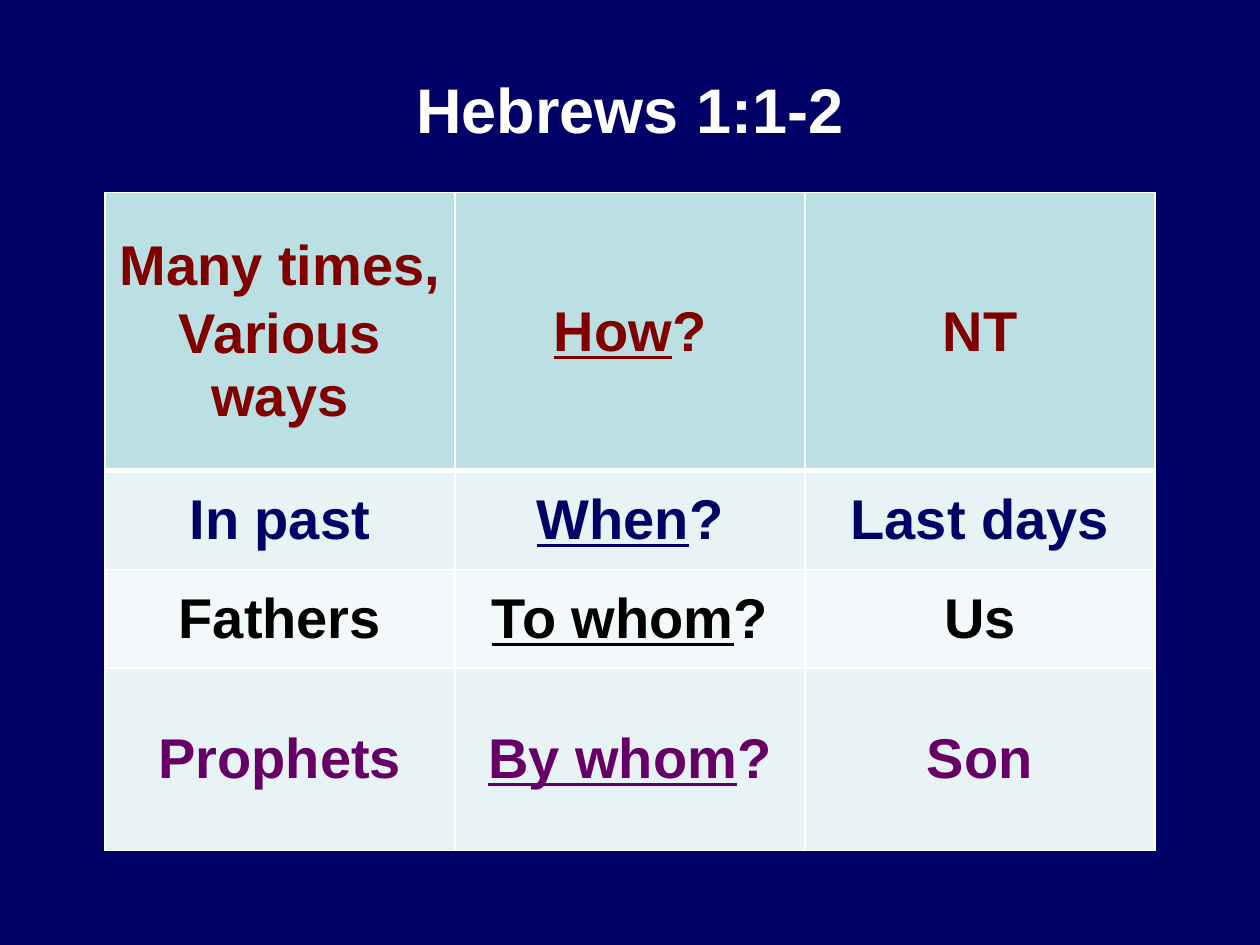
from pptx import Presentation
from pptx.dml.color import RGBColor
from pptx.enum.text import MSO_ANCHOR as Anchor, PP_ALIGN as Align
from pptx.oxml import parse_xml
from pptx.oxml.ns import nsdecls
from pptx.util import Pt

COLORS = {
    "navy": "000066", "white": "FFFFFF", "maroon": "800000",
    "black": "000000", "purple": "660066",
    "header": "BBE0E3", "band": "E7F3F4", "pale": "F3F9FA",
}

# Height, fill, text colour, then the (old, question, new) cells.
ROWS = [
    (159, "header", "maroon", (["Many times,", "Various ways"], "How", "NT")),
    (56.5, "band", "navy", (["In past"], "When", "Last days")),
    (56.5, "pale", "black", (["Fathers"], "To whom", "Us")),
    (104, "band", "purple", (["Prophets"], "By whom", "Son")),
]


def rgb(name):
    return RGBColor.from_string(COLORS[name])


def add_span(para, text, size, color, underline=False):
    para.alignment = Align.CENTER
    span = para.add_run()
    span.text = text
    font = span.font
    font.name, font.size, font.bold = "Arial", Pt(size), True
    font.color.rgb = rgb(color)
    font.underline = underline


def set_borders(cell, widths):
    """Draw white cell borders; widths maps side letters to points."""
    props = cell._tc.get_or_add_tcPr()
    for index, (side, width) in enumerate(widths.items()):
        props.insert(index, parse_xml(
            f'<a:ln{side} {nsdecls("a")} w="{Pt(width)}"><a:solidFill>'
            f'<a:srgbClr val="{COLORS["white"]}"/></a:solidFill></a:ln{side}>'))


def place_title(page, left, top, width, height):
    title = page.shapes.title
    title.left, title.top = Pt(left), Pt(top)
    title.width, title.height = Pt(width), Pt(height)
    frame = title.text_frame
    frame.word_wrap = True
    frame.vertical_anchor = Anchor.MIDDLE
    add_span(frame.paragraphs[0], "Hebrews 1:1-2", 36, "white")


def fill_cell(cell, lines, color):
    """Write one paragraph per line, each a list of (text, underline) spans."""
    cell.vertical_anchor = Anchor.MIDDLE
    frame = cell.text_frame
    for index, spans in enumerate(lines):
        para = frame.add_paragraph() if index else frame.paragraphs[0]
        if index < len(lines) - 1:
            para.space_after = Pt(3)
        for text, underline in spans:
            add_span(para, text, 32, color, underline)


def place_table(page, left, top, width):
    height = sum(row[0] for row in ROWS)
    table = page.shapes.add_table(
        len(ROWS), 3, Pt(left), Pt(top), Pt(width), Pt(height)).table
    for column in table.columns:
        column.width = Pt(width / 3)
    for r, (row_height, fill, color, (old, question, new)) in enumerate(ROWS):
        table.rows[r].height = Pt(row_height)
        contents = (
            [[(line, False)] for line in old],
            [[(question, True), ("?", False)]],
            [[(new, False)]],
        )
        borders = {"L": 1, "R": 1, "T": 3 if r == 1 else 1, "B": 3 if r == 0 else 1}
        for cell, lines in zip(table.rows[r].cells, contents):
            cell.fill.solid()
            cell.fill.fore_color.rgb = rgb(fill)
            set_borders(cell, borders)
            fill_cell(cell, lines, color)


def main():
    deck = Presentation()
    deck.slide_width, deck.slide_height = Pt(720), Pt(540)
    page = deck.slides.add_slide(deck.slide_layouts[5])
    page.background.fill.solid()
    page.background.fill.fore_color.rgb = rgb("navy")
    place_title(page, 36, 21.6, 648, 81)
    place_table(page, 60, 110, 600)
    deck.save("out.pptx")


if __name__ == "__main__":
    main()
